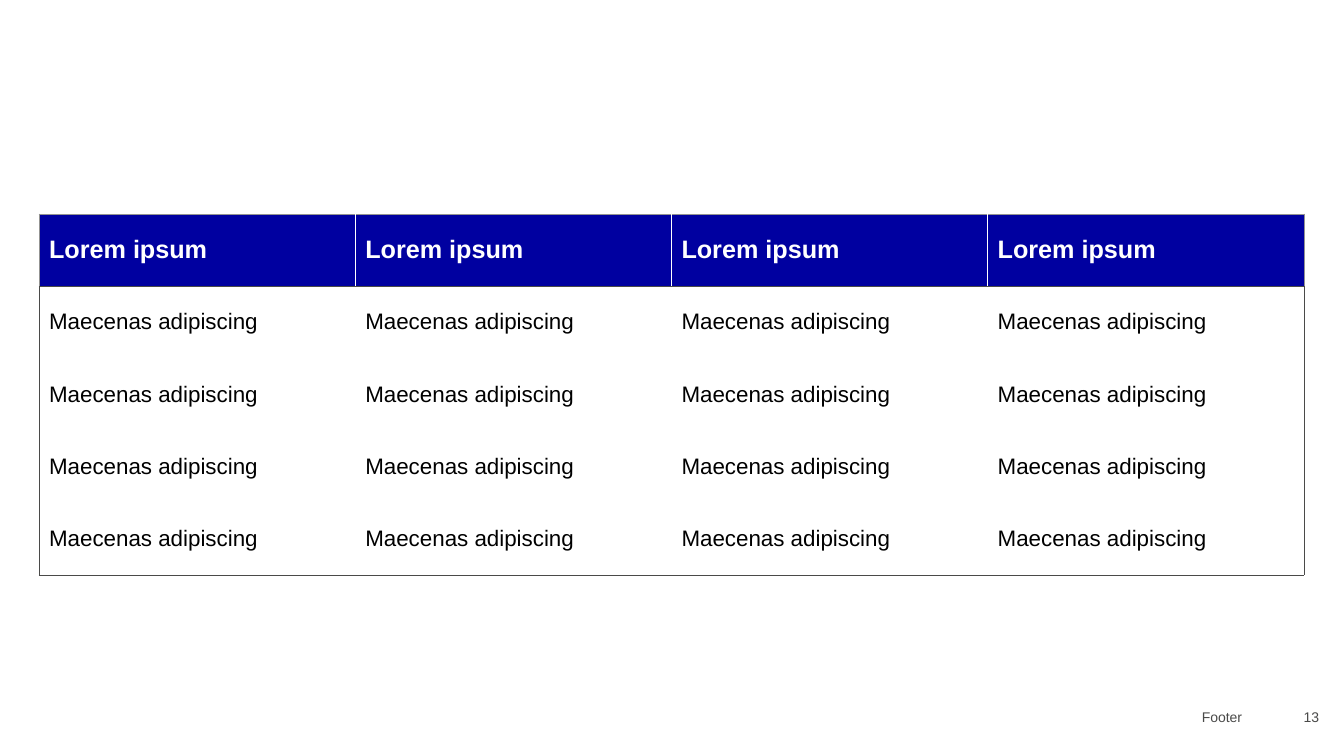
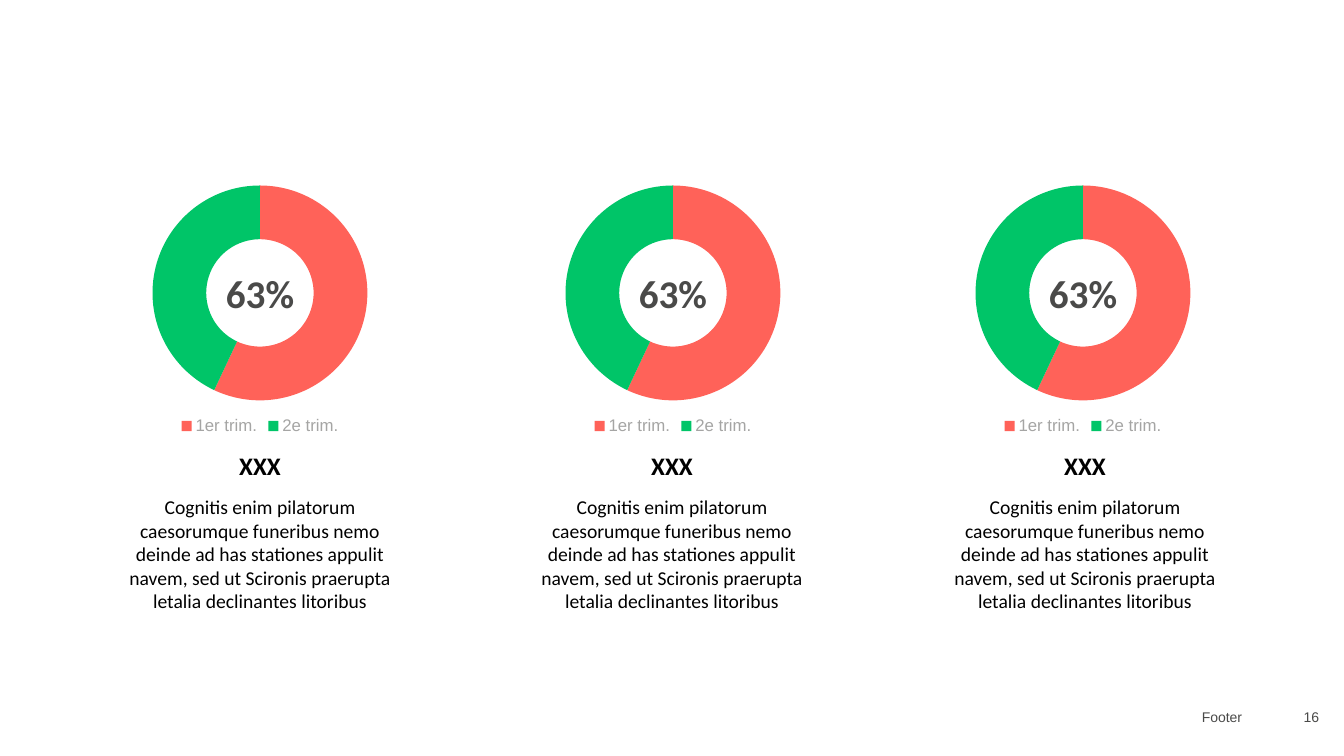
from lxml import etree
from pptx import Presentation
from pptx.chart.data import CategoryChartData
from pptx.dml.color import RGBColor
from pptx.enum.chart import XL_CHART_TYPE, XL_LEGEND_POSITION
from pptx.enum.text import MSO_ANCHOR, MSO_AUTO_SIZE, PP_ALIGN
from pptx.oxml.ns import qn
from pptx.util import Pt

RING = XL_CHART_TYPE.DOUGHNUT
BELOW = XL_LEGEND_POSITION.BOTTOM
TOP, MIDDLE = MSO_ANCHOR.TOP, MSO_ANCHOR.MIDDLE
GROW = MSO_AUTO_SIZE.SHAPE_TO_FIT_TEXT
CENTER, RIGHT = PP_ALIGN.CENTER, PP_ALIGN.RIGHT

# Content
FOOTER = "Footer"
ROWS = [["Lorem ipsum"] * 4] + [["Maecenas adipiscing"] * 4] * 4
BODY = ("Cognitis enim pilatorum caesorumque funeribus nemo deinde ad has "
        "stationes appulit navem, sed ut Scironis praerupta letalia "
        "declinantes litoribus")
PARTS = [("1er trim.", 57, "FF6259"), ("2e trim.", 43, "00C568")]
# Middle of the ring, middle of the text, share, heading, body
DIALS = [
    (260, 260, "63%", "XXX", BODY),
    (673, 672, "63%", "XXX", BODY),
    (1083, 1085, "63%", "XXX", BODY),
]

# Shared styles
BLUE, WHITE, BLACK = "0000A0", "FFFFFF", "000000"
DARK, GREY, PALE = "4A4A49", "939391", "A5A5A4"
SMALL = dict(name="Arial", size=10, color=DARK)
HEAD = dict(name="Arial", size=18, color=WHITE, bold=True)
CELL = dict(name="Arial", size=16, color=BLACK, bold=False)
KEY = dict(name="Arial", size=12, color=PALE)
SHARE = dict(name="Calibri", size=28, color=DARK, bold=True)
TITLE = dict(name="Calibri", size=18, color=BLACK, bold=True)
TEXT = dict(name="Calibri", size=14, color=BLACK)
RIM, THIN, GAP = (GREY, 0.5), (DARK, 0.25), (WHITE, 1)
PLOT = dict(x=0.139, y=0.132, w=0.722, h=0.736)


def px(n):
    return round(n * 914400 / 100.8)


def rgb(code):
    return RGBColor.from_string(code)


def style(font, look):
    for key, val in look.items():
        if key == "color":
            font.color.rgb = rgb(val)
        else:
            setattr(font, key, Pt(val) if key == "size" else val)


def label(slide, at, text, look, align=CENTER, anchor=TOP, grow=False, inset=None):
    frame = slide.shapes.add_textbox(*map(px, at)).text_frame
    frame.word_wrap = True
    frame.vertical_anchor = anchor
    if grow:
        frame.auto_size = GROW
    if inset is not None:
        for side in ("left", "top", "right", "bottom"):
            setattr(frame, f"margin_{side}", px(inset))
    para = frame.paragraphs[0]
    para.alignment = align
    run = para.add_run()
    run.text = text
    style(run.font, look)


def page(deck, num):
    slide = deck.slides.add_slide(deck.slide_layouts[6])
    for at, text in [((672, 697, 580, 39), FOOTER), ((1275, 697, 54, 39), num)]:
        label(slide, at, text, SMALL, RIGHT, MIDDLE)
    return slide


def border(cell, lines):
    props = cell._tc.get_or_add_tcPr()
    for side in "LRTB":
        line = etree.SubElement(props, qn(f"a:ln{side}"))
        if lines.get(side):
            color, width = lines[side]
            line.set("w", str(Pt(width)))
            fill = etree.SubElement(line, qn("a:solidFill"))
            etree.SubElement(fill, qn("a:srgbClr")).set("val", color)
        else:
            etree.SubElement(line, qn("a:noFill"))


def edges(row, col, last_row, last_col):
    if row == 0:
        return dict(L=GAP if col else RIM, T=RIM, B=THIN,
                    R=RIM if col == last_col else GAP)
    return dict(L=None if col else THIN, R=THIN if col == last_col else None,
                T=THIN if row == 1 else None, B=THIN if row == last_row else None)


def grid(slide, at, rows):
    high, wide = len(rows), len(rows[0])
    table = slide.shapes.add_table(high, wide, *map(px, at)).table
    table.horz_banding = False
    for r, line in enumerate(rows):
        for c, text in enumerate(line):
            cell = table.cell(r, c)
            cell.text = text
            cell.vertical_anchor = MIDDLE
            style(cell.text_frame.paragraphs[0].runs[0].font, CELL if r else HEAD)
            border(cell, edges(r, c, high - 1, wide - 1))
            if r:
                cell.fill.background()
            else:
                cell.fill.solid()
                cell.fill.fore_color.rgb = rgb(BLUE)


def ring(slide, at, parts):
    data = CategoryChartData()
    data.categories = [name for name, _, _ in parts]
    data.add_series("Series 1", [val for _, val, _ in parts])
    chart = slide.shapes.add_chart(RING, *map(px, at), data).chart
    chart.has_title = False
    style(chart.font, SMALL)
    chart.has_legend = True
    chart.legend.position = BELOW
    chart.legend.include_in_layout = False
    style(chart.legend.font, KEY)
    plot = chart.plots[0]
    plot.vary_by_categories = True
    for i, (_, _, color) in enumerate(parts):
        fill = plot.series[0].points[i].format.fill
        fill.solid()
        fill.fore_color.rgb = rgb(color)
    plot._element.find(qn("c:holeSize")).set("val", "75")
    # Fixed place of the ring inside the chart
    area = plot._element.getparent()
    for old in area.findall(qn("c:layout")):
        area.remove(old)
    layout = etree.Element(qn("c:layout"))
    area.insert(0, layout)
    manual = etree.SubElement(layout, qn("c:manualLayout"))
    modes = dict(layoutTarget="inner", xMode="edge", yMode="edge")
    for tag, val in {**modes, **PLOT}.items():
        etree.SubElement(manual, qn(f"c:{tag}")).set("val", str(val))


def main():
    deck = Presentation()
    deck.slide_width, deck.slide_height = px(1344), px(756)

    # Table slide
    grid(page(deck, "13"), (39, 214, 1265, 361), ROWS)

    # Ring slide
    slide = page(deck, "16")
    for hub, mid, share, title, body in DIALS:
        ring(slide, (hub - 178, 147, 356, 292), PARTS)
        label(slide, (hub - 86, 264, 172, 57), share, SHARE, grow=True)
        label(slide, (mid - 130, 445, 260, 40), title, TITLE, grow=True)
        label(slide, (mid - 149, 495, 298, 119), body, TEXT, grow=True, inset=0)

    deck.save("out.pptx")


if __name__ == "__main__":
    main()
